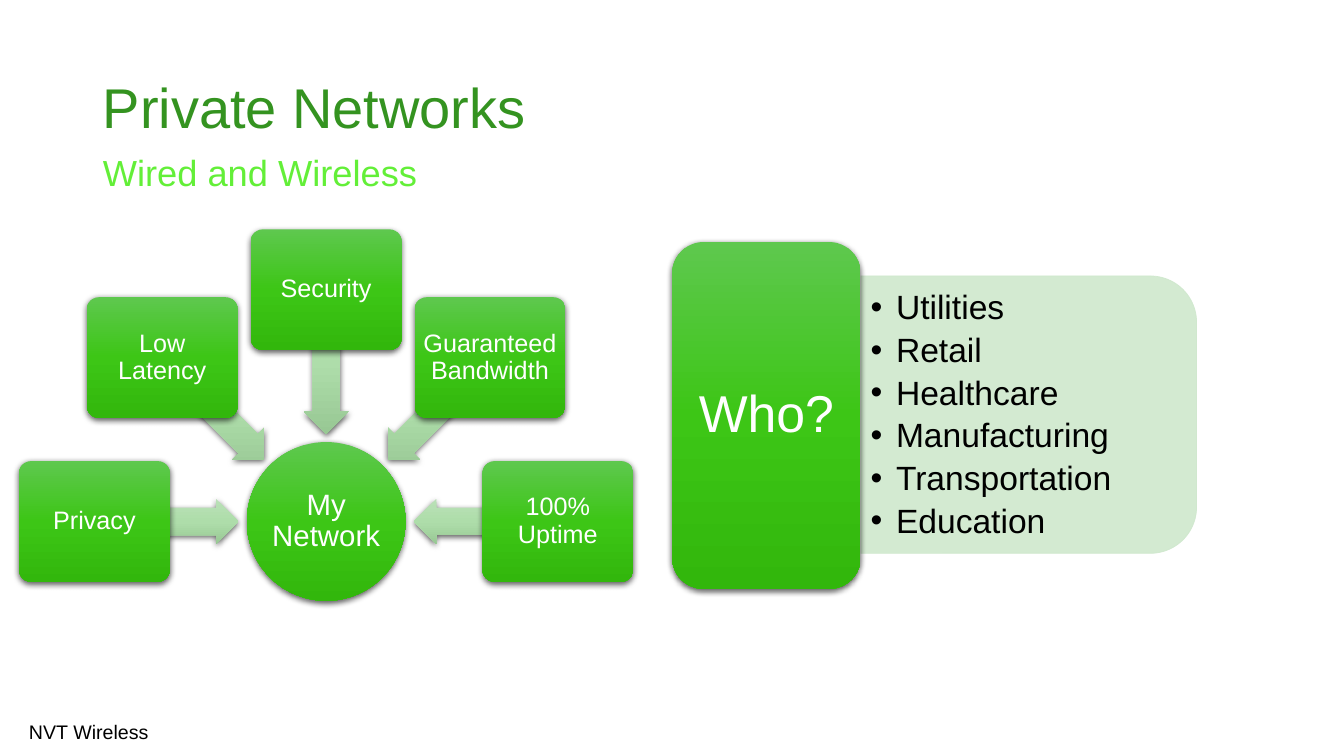
from math import cos, radians, sin

from pptx import Presentation
from pptx.dml.color import RGBColor
from pptx.enum.shapes import MSO_SHAPE
from pptx.enum.text import MSO_ANCHOR, MSO_AUTO_SIZE, PP_ALIGN
from pptx.oxml import parse_xml
from pptx.oxml.ns import nsdecls, qn
from pptx.util import Cm, Pt

ROUNDED, OVAL = MSO_SHAPE.ROUNDED_RECTANGLE, MSO_SHAPE.OVAL
ARROW, TWO_ROUNDED = MSO_SHAPE.LEFT_ARROW, MSO_SHAPE.ROUND_2_SAME_RECTANGLE
LEFT, CENTER = PP_ALIGN.LEFT, PP_ALIGN.CENTER
MIDDLE, TOP = MSO_ANCHOR.MIDDLE, MSO_ANCHOR.TOP
NO_FIT = MSO_AUTO_SIZE.NONE

FONT = "Arial"
GREEN = ("5EC84E", "3DC616", "32B70C")
PALE_GREEN = ("BAE0B7", "AEDDAA", "98C894")
TITLE_GREEN, SUBTITLE_GREEN, PANEL_GREEN = "349320", "63EF38", "CFE8CD"
WHITE, BLACK = "FFFFFF", "000000"
INSETS = (0.25, 0.13)

HUB_X, HUB_Y, HUB_SIZE = 8.22, 13.14, 4
ARROW_RADIUS, BENEFIT_RADIUS = 4.02, 5.84
BENEFITS = ["Privacy", "Low Latency", "Security", "Guaranteed Bandwidth", "100% Uptime"]
INDUSTRIES = ["Utilities", "Retail", "Healthcare", "Manufacturing",
              "Transportation", "Education"]


def rgb(color):
    return RGBColor.from_string(color)


def centered(x, y, width, height):
    """Return the left, top, width and height of a box around a centre."""
    return x - width / 2, y - height / 2, width, height


class NetworkSlide:
    def __init__(self, slide):
        self.slide = slide

    def add_text(self, shape, lines, size, color, align=LEFT, anchor=MIDDLE,
                 insets=INSETS, line_spacing=0.9, after=0, bullet=None):
        frame = shape.text_frame
        frame.auto_size = NO_FIT
        frame.word_wrap = True
        frame.vertical_anchor = anchor
        frame.margin_left = frame.margin_right = Cm(insets[0])
        frame.margin_top = frame.margin_bottom = Cm(insets[1])
        for number, line in enumerate(lines):
            paragraph = frame.add_paragraph() if number else frame.paragraphs[0]
            properties = paragraph._p.get_or_add_pPr()
            hanging = Cm(0.64) if bullet else 0
            properties.set("marL", str(hanging))
            properties.set("indent", str(-hanging))
            mark = f'buChar {nsdecls("a")} char="{bullet}"' if bullet else f'buNone {nsdecls("a")}'
            properties.append(parse_xml(f"<a:{mark}/>"))
            paragraph.alignment = align
            paragraph.line_spacing = line_spacing
            paragraph.space_before = Pt(0)
            paragraph.space_after = Pt(after)
            run = paragraph.add_run()
            run.text = line
            run.font.name = FONT
            run.font.size = Pt(size)
            run.font.color.rgb = rgb(color)

    def placeholder(self, index, box, lines, size, color, **style):
        holder = self.slide.placeholders[index]
        holder.left, holder.top, holder.width, holder.height = map(Cm, box)
        self.add_text(holder, lines, size, color, **style)
        return holder

    def label(self, box, text, size, color):
        self.add_text(self.slide.shapes.add_textbox(*map(Cm, box)), [text], size, color,
                      line_spacing=1.0)

    def shape(self, kind, box, adjustments=(), rotation=0):
        shape = self.slide.shapes.add_shape(kind, *map(Cm, box))
        shape.shadow.inherit = False
        shape.rotation = rotation
        for number, value in enumerate(adjustments):
            shape.adjustments[number] = value
        return shape

    def glossy(self, kind, box, colors, **geometry):
        """Draw a borderless shape with a vertical gradient and a soft shadow."""
        shape = self.shape(kind, box, **geometry)
        shape.line.fill.background()
        stops = "".join(
            f'<a:gs pos="{number * 50000}"><a:srgbClr val="{color}"/></a:gs>'
            for number, color in enumerate(colors))
        properties = shape._element.spPr
        properties.find(qn("a:prstGeom")).addnext(parse_xml(
            f'<a:gradFill {nsdecls("a")} rotWithShape="0"><a:gsLst>{stops}</a:gsLst>'
            '<a:lin ang="5400000" scaled="0"/></a:gradFill>'))
        properties.find(qn("a:effectLst")).append(parse_xml(
            f'<a:outerShdw {nsdecls("a")} blurRad="{Pt(4.5)}" dist="{Pt(1.5)}" '
            'dir="5400000" rotWithShape="0"><a:srgbClr val="000000">'
            '<a:alpha val="63000"/></a:srgbClr></a:outerShdw>'))
        return shape

    def translucent(self, kind, box, color, **geometry):
        shape = self.shape(kind, box, **geometry)
        shape.fill.solid()
        shape.fill.fore_color.rgb = rgb(color)
        shape.line.color.rgb = rgb(color)
        shape.line.width = Pt(0.5)
        for tint in shape._element.spPr.iter(qn("a:srgbClr")):
            tint.append(parse_xml(f'<a:alpha {nsdecls("a")} val="90000"/>'))

    def bring_to_front(self, shape):
        self.slide.shapes._spTree.append(shape._element)


def main():
    deck = Presentation()
    deck.slide_width, deck.slide_height = Cm(33.87), Cm(19.05)
    page = NetworkSlide(deck.slides.add_slide(deck.slide_layouts[3]))

    page.placeholder(0, (2.34, 1.88, 28.7, 1.8), ["Private Networks"], 40, TITLE_GREEN)
    page.placeholder(1, (2.34, 3.86, 19.94, 1.24), ["Wired and Wireless"], 25.9,
                     SUBTITLE_GREEN, anchor=TOP, line_spacing=0.8)

    hub = page.glossy(OVAL, centered(HUB_X, HUB_Y, HUB_SIZE, HUB_SIZE), GREEN)
    page.add_text(hub, ["My Network"], 21, WHITE, align=CENTER, insets=(0.03, 0.03))
    for number, name in enumerate(BENEFITS):
        angle = 180 + 45 * number
        across, down = cos(radians(angle)), sin(radians(angle))
        page.glossy(ARROW, centered(HUB_X + ARROW_RADIUS * across,
                                    HUB_Y + ARROW_RADIUS * down, 3.63, 1.14),
                    PALE_GREEN, adjustments=(0.6, 0.5), rotation=angle % 360)
        benefit = page.glossy(ROUNDED, centered(HUB_X + BENEFIT_RADIUS * across,
                                                HUB_Y + BENEFIT_RADIUS * down, 3.8, 3.04),
                              GREEN, adjustments=(0.1,))
        page.add_text(benefit, [name], 18, WHITE, align=CENTER, insets=(0.09, 0.09))

    page.translucent(TWO_ROUNDED, (22.43, 6.22, 6.99, 8.46), PANEL_GREEN, rotation=90)
    industries = page.placeholder(2, (21.69, 7.32, 8.1, 6.3), INDUSTRIES, 24, BLACK,
                                  after=4.6, bullet="•")
    page.bring_to_front(industries)
    question = page.glossy(ROUNDED, (16.94, 6.1, 4.75, 8.74), GREEN)
    page.add_text(question, ["Who?"], 37, WHITE, align=CENTER, insets=(0.38, 0.2))

    page.label((0.48, 17.81, 8.94, 1.24), "NVT Wireless", 14, BLACK)
    deck.save("out.pptx")


if __name__ == "__main__":
    main()
